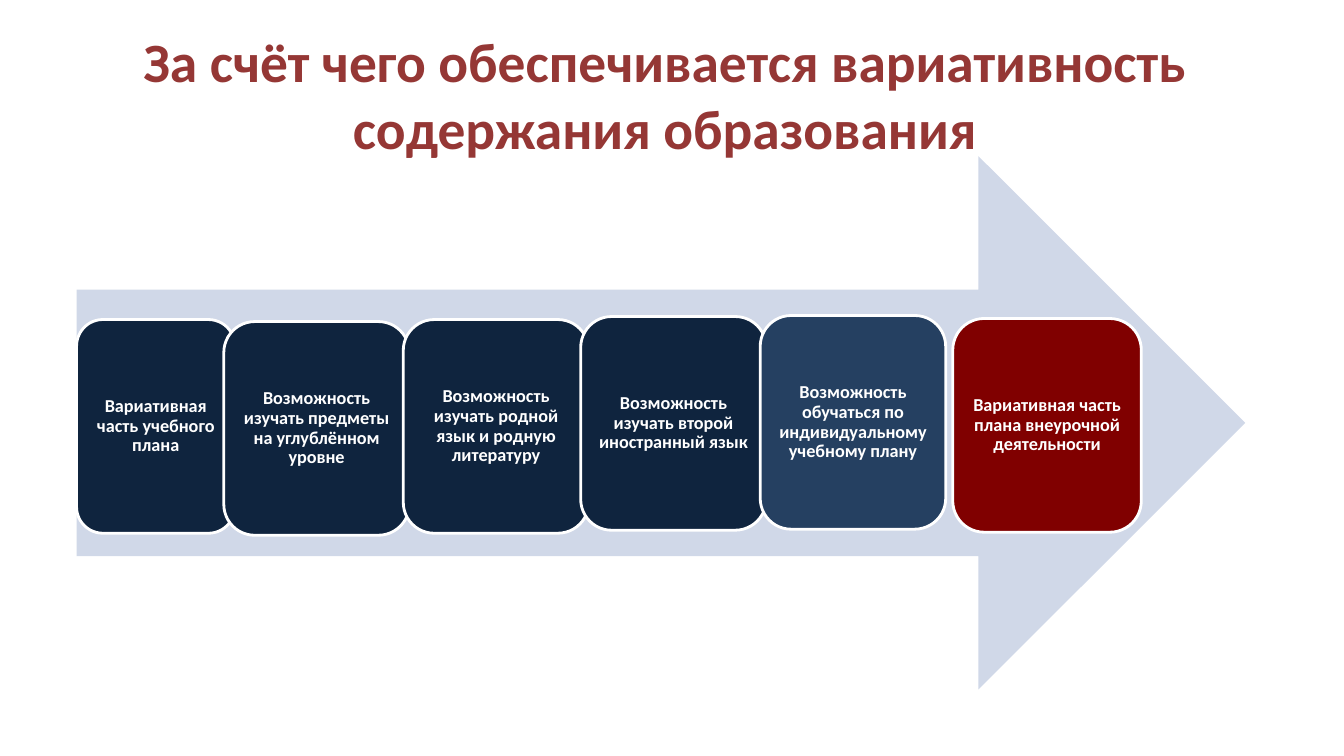
from pptx import Presentation
from pptx.dml.color import RGBColor
from pptx.enum.shapes import MSO_SHAPE
from pptx.enum.text import MSO_ANCHOR, MSO_AUTO_SIZE, PP_ALIGN
from pptx.util import Inches, Pt

NAVY = "0F243E"
CARD_HEIGHT = 2.12
CARDS = [
    (0, 1.62, 1.57, NAVY, "Вариативная часть учебного плана"),
    (8.69, 1.61, 1.87, "800000", "Вариативная часть плана внеурочной деятельности"),
    (1.46, 1.64, 1.84, NAVY, "Возможность изучать предметы на углублённом уровне"),
    (3.24, 1.62, 1.84, NAVY, "Возможность изучать родной язык и родную литературу"),
    (5, 1.59, 1.84, NAVY, "Возможность изучать второй иностранный язык"),
    (6.78, 1.58, 1.84, "254061", "Возможность обучаться по индивидуальному учебному плану"),
]


def color(value):
    """Turn a hex string into a colour."""
    return RGBColor.from_string(value)


def write_text(shape, text, size, text_color):
    """Write one bold, centred paragraph in the middle of a shape."""
    frame = shape.text_frame
    frame.word_wrap = True
    frame.auto_size = MSO_AUTO_SIZE.NONE
    frame.vertical_anchor = MSO_ANCHOR.MIDDLE
    paragraph = frame.paragraphs[0]
    paragraph.alignment = PP_ALIGN.CENTER
    run = paragraph.add_run()
    run.text = text
    run.font.name = "Calibri"
    run.font.size = Pt(size)
    run.font.bold = True
    run.font.color.rgb = color(text_color)


def add_filled_shape(slide, kind, left, top, width, height, fill):
    """Add a flat preset shape with a solid fill."""
    shape = slide.shapes.add_shape(
        kind, Inches(left), Inches(top), Inches(width), Inches(height)
    )
    shape.shadow.inherit = False
    shape.fill.solid()
    shape.fill.fore_color.rgb = color(fill)
    return shape


def add_title(slide, left, top, width, height):
    """Place and format the slide title."""
    title = slide.shapes.title
    title.left, title.top = Inches(left), Inches(top)
    title.width, title.height = Inches(width), Inches(height)
    text = "За счёт чего обеспечивается вариативность содержания образования"
    write_text(title, text, 39.6, "953735")


def add_card(slide, left, top, width, fill, text):
    """Add one rounded card with its text."""
    card = add_filled_shape(
        slide, MSO_SHAPE.ROUNDED_RECTANGLE, left, top, width, CARD_HEIGHT, fill
    )
    card.line.color.rgb = color("FFFFFF")
    card.line.width = Pt(2)
    frame = card.text_frame
    frame.margin_left = frame.margin_right = Inches(0.05)
    frame.margin_top = frame.margin_bottom = Inches(0.05)
    write_text(card, text, 13, "FFFFFF")
    frame.paragraphs[0].line_spacing = 0.9


def add_arrow_process(slide, left, top, width, height):
    """Add the wide arrow and the cards that lie on it."""
    arrow = add_filled_shape(
        slide, MSO_SHAPE.RIGHT_ARROW, left, top, width, height, "D0D8E8"
    )
    arrow.line.fill.background()
    for offset_left, offset_top, card_width, fill, text in CARDS:
        add_card(slide, left + offset_left, top + offset_top, card_width, fill, text)


def main():
    """Build and save the presentation."""
    presentation = Presentation()
    presentation.slide_width = Inches(13.33)
    presentation.slide_height = Inches(7.5)
    slide = presentation.slides.add_slide(presentation.slide_layouts[5])
    add_title(slide, 0.45, 0.21, 12.29, 1.44)
    add_arrow_process(slide, 0.76, 1.55, 11.59, 5.29)
    presentation.save("out.pptx")


if __name__ == "__main__":
    main()
